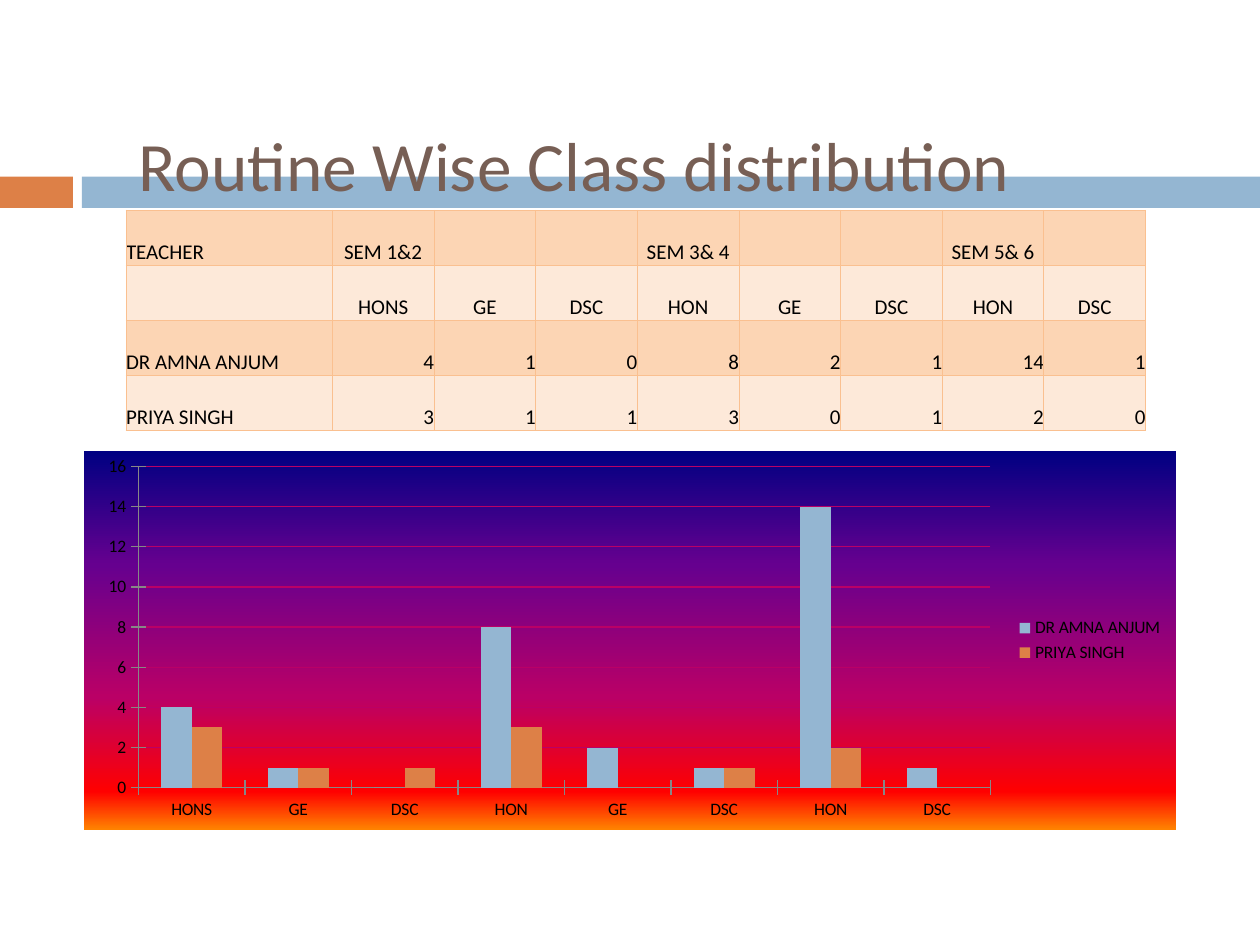
"""Build the slide on routine wise class distribution."""
from lxml.etree import SubElement
from pptx import Presentation
from pptx.chart.data import CategoryChartData as ChartData
from pptx.dml.color import RGBColor as Rgb
from pptx.enum.chart import XL_CHART_TYPE as ChartType, XL_LEGEND_POSITION as LegendPlace
from pptx.enum.chart import XL_TICK_MARK as Tick
from pptx.enum.shapes import MSO_SHAPE as Preset
from pptx.enum.text import MSO_ANCHOR as Anchor, PP_ALIGN as Align
from pptx.oxml import parse_xml
from pptx.oxml.ns import nsdecls, qn
from pptx.util import Cm, Pt

FONT = "Calibri"
COLORS = {"blue": "94B6D2", "orange": "DD8047", "title": "775F55", "text": "000000",
          "dark row": "FCD5B4", "light row": "FDE9D9", "border": "FAC090", "grid": "BA0066"}
BANDS = [("orange", 0, 1.47), ("blue", 1.65, 23.75)]
TITLE = "Routine Wise Class distribution"
SEMESTERS = ["TEACHER", "SEM 1&2", "", "", "SEM 3& 4", "", "", "SEM 5& 6", ""]
COURSES = ["HONS", "GE", "DSC", "HON", "GE", "DSC", "HON", "DSC"]
CLASSES = {"DR AMNA ANJUM": [4, 1, 0, 8, 2, 1, 14, 1],
           "PRIYA SINGH": [3, 1, 1, 3, 0, 1, 2, 0]}
GRADIENT = [(0, "000082"), (30, "66008F"), (65, "BA0066"), (90, "FF0000"), (100, "FF8200")]
PLOT_AREA = {"x": 0.05, "y": 0.04, "w": 0.78, "h": 0.85}
NAME_WIDTH, COURSE_WIDTH, ROW_HEIGHT = 4.16, 2.05, 1.11
CELL_FORMAT = {"margin_left": 0, "margin_right": 0, "margin_top": 0, "margin_bottom": 0,
               "vertical_anchor": Anchor.BOTTOM}


def color(name):
    return Rgb.from_string(COLORS[name])


def set_values(target, values):
    for name, value in values.items():
        setattr(target, name, value)


def set_font(font, size, name="text"):
    set_values(font, {"name": FONT, "size": Pt(size)})
    font.color.rgb = color(name)


def paint(target, name):
    target.fill.solid()
    target.fill.fore_color.rgb = color(name)


def add_bands(page):
    for name, left, width in BANDS:
        band = page.shapes.add_shape(Preset.RECTANGLE, Cm(left), Cm(3.56), Cm(width), Cm(0.63))
        band.shadow.inherit = False
        paint(band, name)
        band.line.fill.background()


def add_title(page):
    box = page.shapes.add_textbox(Cm(2.54), Cm(1.48), Cm(18.9), Cm(3.63))
    set_values(box.text_frame, {"word_wrap": True, "vertical_anchor": Anchor.MIDDLE})
    span = box.text_frame.paragraphs[0].add_run()
    span.text = TITLE
    set_font(span.font, 39.6, "title")


def add_borders(cell):
    properties = cell._tc.get_or_add_tcPr()
    for index, side in enumerate(("lnL", "lnR", "lnT", "lnB")):
        properties.insert(index, parse_xml(
            f'<a:{side} {nsdecls("a")} w="{Pt(0.5)}"><a:solidFill>'
            f'<a:srgbClr val="{COLORS["border"]}"/></a:solidFill></a:{side}>'))


def add_class_table(page):
    rows = [SEMESTERS, ["", *COURSES]] + [[name, *counts] for name, counts in CLASSES.items()]
    widths = [NAME_WIDTH] + [COURSE_WIDTH] * len(COURSES)
    table = page.shapes.add_table(len(rows), len(widths), Cm(2.54), Cm(4.24),
                                  Cm(sum(widths)), Cm(ROW_HEIGHT * len(rows))).table
    for column, width in zip(table.columns, widths):
        column.width = Cm(width)
    for row_index, row in enumerate(rows):
        table.rows[row_index].height = Cm(ROW_HEIGHT)
        for column_index, value in enumerate(row):
            cell = table.cell(row_index, column_index)
            set_values(cell, CELL_FORMAT)
            paint(cell, "light row" if row_index % 2 else "dark row")
            add_borders(cell)
            para = cell.text_frame.paragraphs[0]
            set_font(para.font, 12)
            if value != "":
                span = para.add_run()
                span.text = str(value)
                set_font(span.font, 12)
            if column_index:
                para.alignment = Align.RIGHT if isinstance(value, int) else Align.CENTER


def fill_properties(fill):
    return parse_xml(f'<c:spPr {nsdecls("c", "a")}>{fill}<a:ln><a:noFill/></a:ln></c:spPr>')


def set_chart_area(chart):
    stops = "".join(f'<a:gs pos="{place * 1000}"><a:srgbClr val="{shade}"/></a:gs>'
                    for place, shade in GRADIENT)
    gradient = f'<a:gradFill><a:gsLst>{stops}</a:gsLst><a:lin ang="5400000" scaled="0"/></a:gradFill>'
    space = chart._chartSpace
    space.find(qn("c:chart")).addnext(fill_properties(gradient))
    plot_area = space.find(".//" + qn("c:plotArea"))
    plot_area.append(fill_properties("<a:noFill/>"))
    for old in plot_area.findall(qn("c:layout")):
        plot_area.remove(old)
    layout = parse_xml(f'<c:layout {nsdecls("c")}><c:manualLayout/></c:layout>')
    plot_area.insert(0, layout)
    settings = {"layoutTarget": "inner", "xMode": "edge", "yMode": "edge", **PLOT_AREA}
    for name, value in settings.items():
        SubElement(layout[0], qn(f"c:{name}")).set("val", str(value))


def add_class_chart(page):
    data = ChartData()
    data.categories = COURSES
    for name, counts in CLASSES.items():
        data.add_series(name, counts)
    chart = page.shapes.add_chart(ChartType.COLUMN_CLUSTERED, Cm(1.69), Cm(9.1),
                                  Cm(22.02), Cm(7.62), data).chart
    set_font(chart.font, 10)
    set_values(chart, {"has_title": False, "has_legend": True})
    set_values(chart.legend, {"position": LegendPlace.RIGHT, "include_in_layout": False})
    set_values(chart.plots[0], {"vary_by_categories": False, "gap_width": 150, "overlap": 0})
    for series, name in zip(chart.plots[0].series, ("blue", "orange")):
        paint(series.format, name)
    for axis in (chart.category_axis, chart.value_axis):
        axis.major_tick_mark = Tick.CROSS
    set_values(chart.value_axis, {"minimum_scale": 0, "maximum_scale": 16, "major_unit": 2})
    grid = chart.value_axis.major_gridlines.format.line
    grid.color.rgb = color("grid")
    grid.width = Pt(0.75)
    set_chart_area(chart)


def main():
    deck = Presentation()
    set_values(deck, {"slide_width": Cm(25.4), "slide_height": Cm(19.05)})
    page = deck.slides.add_slide(deck.slide_layouts[6])
    for add_part in (add_bands, add_title, add_class_chart, add_class_table):
        add_part(page)
    deck.save("out.pptx")


if __name__ == "__main__":
    main()
